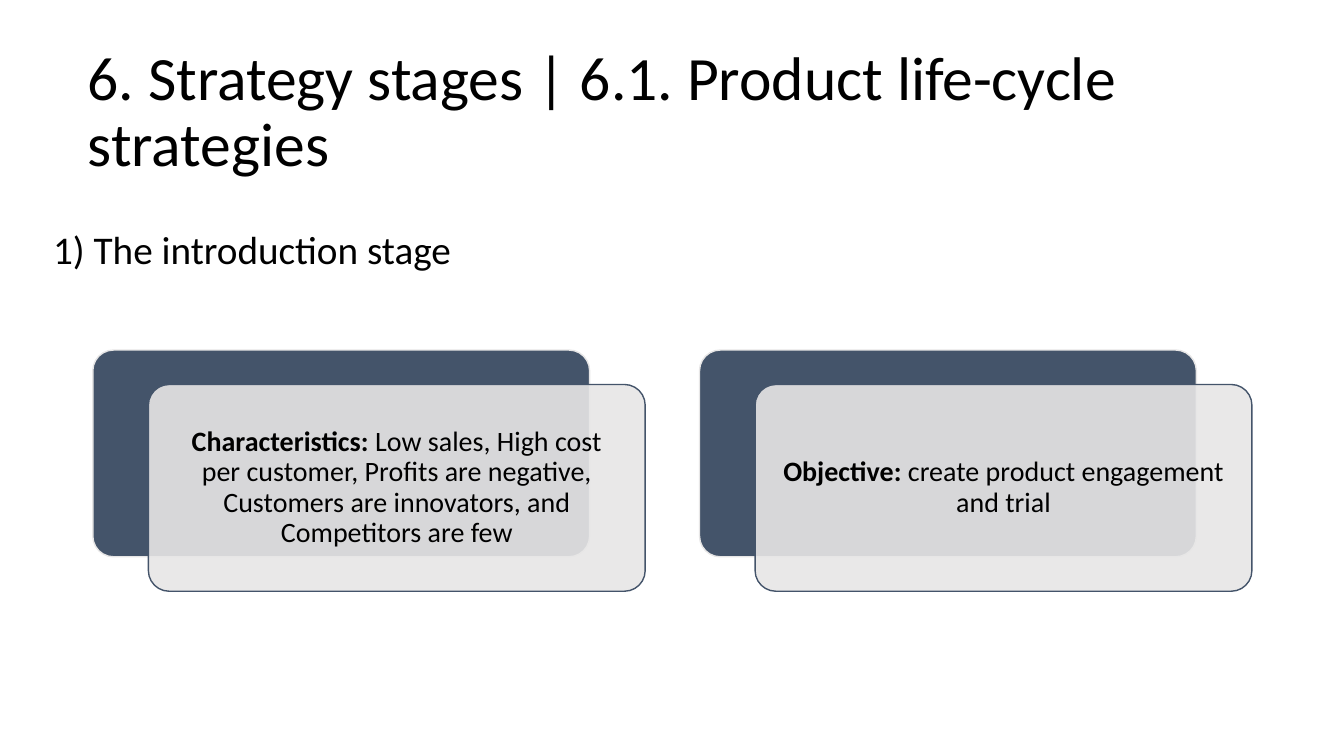
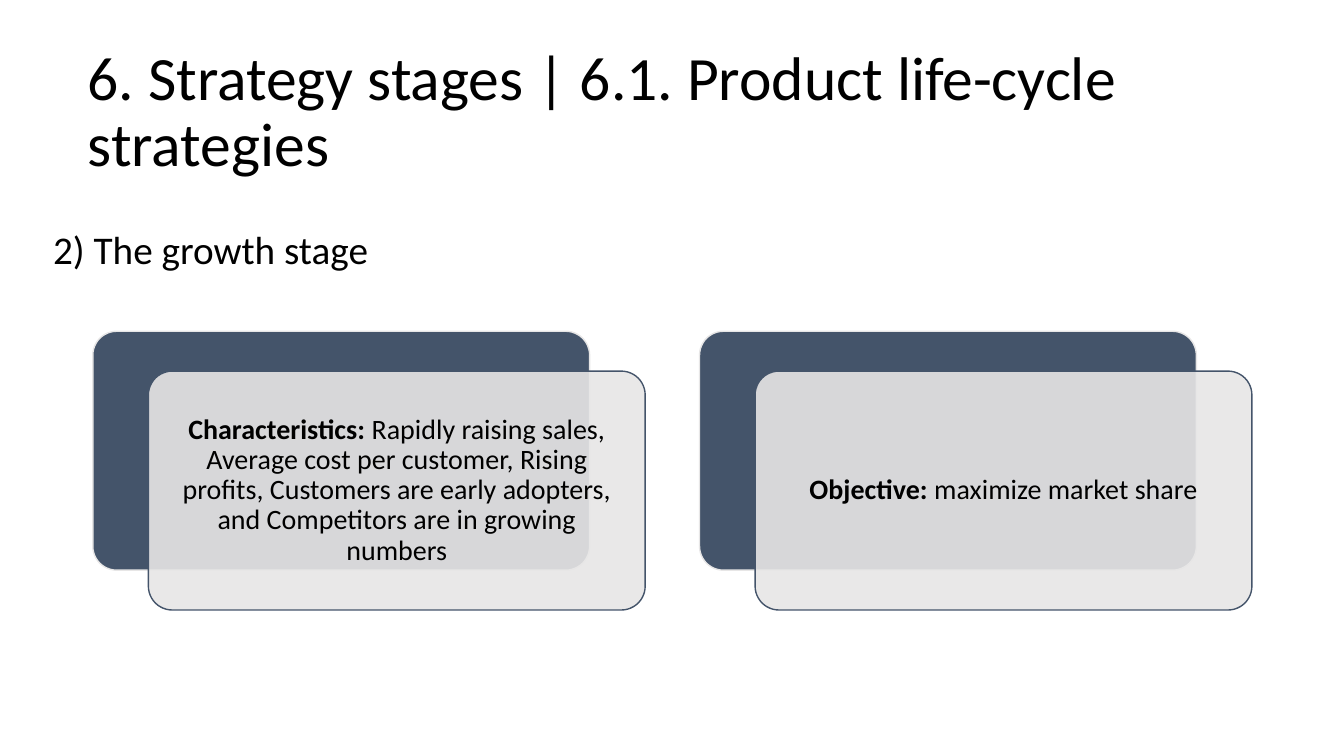
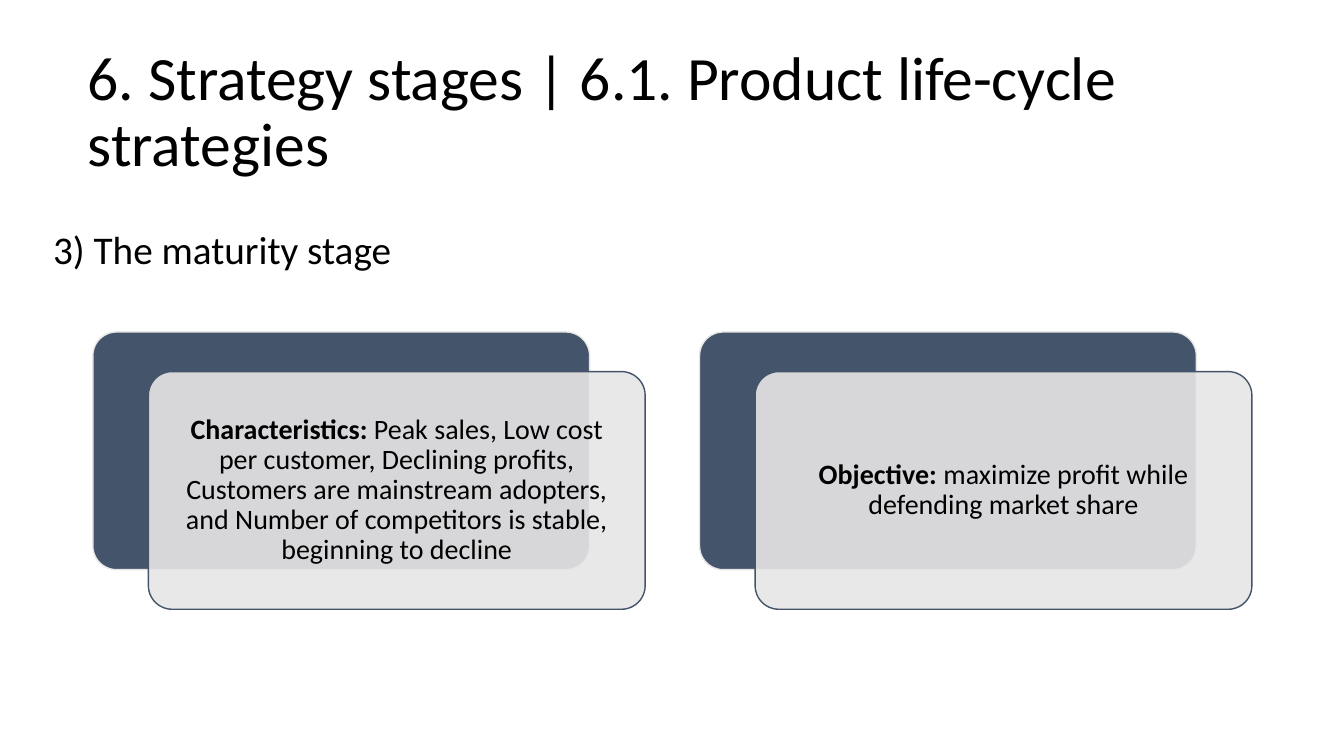
"""Build three slides on product life-cycle strategies."""
from lxml import etree
from pptx import Presentation
from pptx.dml.color import RGBColor
from pptx.enum.shapes import MSO_SHAPE
from pptx.enum.text import MSO_ANCHOR, PP_ALIGN
from pptx.oxml.ns import qn
from pptx.util import Cm, Pt

ROUNDED = MSO_SHAPE.ROUNDED_RECTANGLE
TOP, MIDDLE = MSO_ANCHOR.TOP, MSO_ANCHOR.MIDDLE
LEFT, CENTER = PP_ALIGN.LEFT, PP_ALIGN.CENTER

BLACK = RGBColor(0x00, 0x00, 0x00)
SLATE = RGBColor(0x44, 0x54, 0x6A)
SILVER = RGBColor(0xE7, 0xE6, 0xE6)
FONT = "Calibri"

TITLE = "6. Strategy stages | 6.1. Product life-cycle strategies"
STAGES = [
    {
        "heading": "1) The introduction stage",
        "card_height": 5.21,
        "cards": [
            ("Characteristics:", " Low sales, High cost per customer, Profits are negative, "
             "Customers are innovators, and Competitors are few"),
            ("Objective:", " create product engagement and trial"),
        ],
    },
    {
        "heading": "2) The growth stage",
        "card_height": 6.02,
        "cards": [
            ("Characteristics:", " Rapidly raising sales, Average cost per customer, Rising profits, "
             "Customers are early adopters, and Competitors are in growing numbers"),
            ("Objective:", " maximize market share"),
        ],
    },
    {
        "heading": "3) The maturity stage",
        "card_height": 5.99,
        "cards": [
            ("Characteristics:", " Peak sales, Low cost per customer, Declining profits, "
             "Customers are mainstream adopters, and Number of competitors is stable, "
             "beginning to decline"),
            ("Objective:", " maximize profit while defending market share"),
        ],
    },
]

TITLE_AREA = (1.96, 1.02, 29.77, 3.68)
HEADING_AREA = (1.09, 5.69, 31.67, 12.34)
CARDS_LEFT, CARDS_MIDDLE = 2.34, 11.86
CARD_WIDTH, CARD_PITCH = 12.52, 15.29
FRONT_SHIFT = 1.4
FRONT_DROP_RATIO = 1 / 6
CARD_INSET = 0.55


def write(frame, pieces, size, anchor, alignment):
    """Fill a text frame with one paragraph of (text, bold) pieces."""
    frame.word_wrap = True
    frame.vertical_anchor = anchor
    para = frame.paragraphs[0]
    para.alignment = alignment
    para.line_spacing = 0.9
    for text, bold in pieces:
        span = para.add_run()
        span.text = text
        span.font.name = FONT
        span.font.size = Pt(size)
        span.font.bold = bold
        span.font.color.rgb = BLACK


def add_text(slide, area, text, size, anchor):
    """Add a left-aligned text box."""
    box = slide.shapes.add_textbox(*map(Cm, area))
    write(box.text_frame, [(text, False)], size, anchor, LEFT)


def add_panel(slide, left, top, height, fill, line):
    """Add one rounded panel of a card."""
    panel = slide.shapes.add_shape(ROUNDED, Cm(left), Cm(top), Cm(CARD_WIDTH), Cm(height))
    panel.adjustments[0] = 0.1
    panel.shadow.inherit = False
    panel.fill.solid()
    panel.fill.fore_color.rgb = fill
    panel.line.color.rgb = line
    panel.line.width = Pt(1)
    return panel


def set_opacity(shape, percent):
    """Make the solid fill of a shape partly transparent."""
    fill = shape.fill._xPr.find(qn("a:solidFill"))
    etree.SubElement(fill[0], qn("a:alpha"), val=str(percent * 1000))


def add_card(slide, left, top, height, label, text):
    """Add a dark panel with a shifted, translucent text panel over it."""
    add_panel(slide, left, top, height, SLATE, SILVER)
    drop = height * FRONT_DROP_RATIO
    front = add_panel(slide, left + FRONT_SHIFT, top + drop, height, SILVER, SLATE)
    set_opacity(front, 90)
    frame = front.text_frame
    frame.margin_left = frame.margin_right = Cm(CARD_INSET)
    write(frame, [(label, True), (text, False)], 20, MIDDLE, CENTER)


def add_stage(deck, stage):
    """Add the slide of one life-cycle stage."""
    slide = deck.slides.add_slide(deck.slide_layouts[6])
    add_text(slide, TITLE_AREA, TITLE, 44, MIDDLE)
    add_text(slide, HEADING_AREA, stage["heading"], 28, TOP)
    height = stage["card_height"]
    top = CARDS_MIDDLE - height * (1 + FRONT_DROP_RATIO) / 2
    for column, (label, text) in enumerate(stage["cards"]):
        add_card(slide, CARDS_LEFT + column * CARD_PITCH, top, height, label, text)


def main():
    """Build and save the deck."""
    deck = Presentation()
    deck.slide_width, deck.slide_height = Cm(33.87), Cm(19.05)
    for stage in STAGES:
        add_stage(deck, stage)
    deck.save("out.pptx")


if __name__ == "__main__":
    main()
